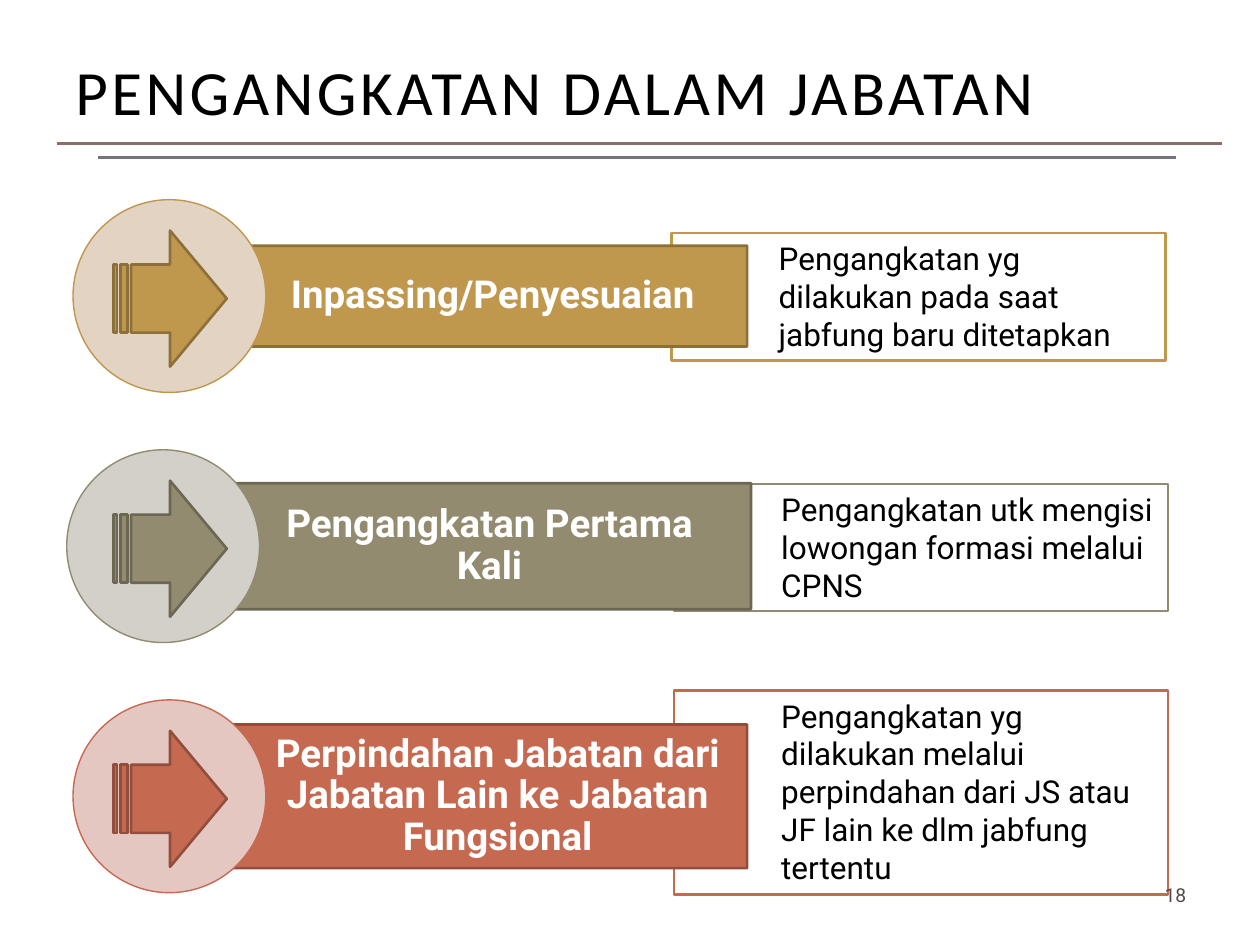
from pptx import Presentation, util as u
from pptx.dml.color import RGBColor
from pptx.enum import shapes, text
from pptx.oxml.ns import qn
from lxml import etree

TITLE = "PENGANGKATAN DALAM JABATAN"
PAGE = "18"

# Tops and heights of the notes, lefts of the bands and circles, in inches
ROUTES = [
    {"label": "Inpassing/Penyesuaian",
     "note": "Pengangkatan yg dilakukan pada saat jabfung baru ditetapkan",
     "main": "BF974D", "edge": "8D7039", "tint": "E2D3C2",
     "note_box": (5.33, 1.85, 3.92, 1.01),
     "band": (1.19, 4.74, 0.8), "label_left": 1.39, "circle_left": 0.58},
    {"label": "Pengangkatan Pertama Kali",
     "note": "Pengangkatan utk mengisi lowongan formasi melalui CPNS",
     "main": "928B70", "edge": "6C6753", "tint": "D2D0C9",
     "note_box": (5.35, 3.84, 3.92, 1.01),
     "band": (1.06, 4.9, 1.0), "label_left": 1.31, "circle_left": 0.53},
    {"label": "Perpindahan Jabatan dari Jabatan Lain ke Jabatan Fungsional",
     "note": "Pengangkatan yg dilakukan melalui perpindahan dari JS atau "
             "JF lain ke dlm jabfung tertentu",
     "main": "C66951", "edge": "924E3C", "tint": "E5C7C2",
     "note_box": (5.35, 5.48, 3.92, 1.62),
     "band": (1.19, 4.74, 1.14), "label_left": 1.47, "circle_left": 0.58},
]
RULES = [(0.45, 9.7, 1.14, "87706B"), (0.78, 9.33, 1.25, "6F777D")]

THEME = {
    "paper": "FFFFFF",
    "line": 1.5,
    "thin": 0.79,
    "title": {"name": "Calibri", "size": 36, "color": "000000"},
    "label": {"name": "Roboto", "size": 22, "color": "FFFFFF", "bold": True},
    "note": {"name": "Roboto", "size": 18, "color": "000000"},
    "page": {"name": "Roboto", "size": 11, "color": "534949"},
}
FIRST_CENTRE, PITCH = 2.35, 1.985
CIRCLE = 1.53
ARROW_LEFT, ARROW_WIDTH, ARROW_HEIGHT = 0.9, 0.9, 1.08

SHAPE = shapes.MSO_SHAPE
CENTRE = text.PP_ALIGN.CENTER
MIDDLE = text.MSO_ANCHOR.MIDDLE


def inches(box):
    return [u.Inches(length) for length in box]


def add_figure(slide, kind, box, fill, line, width=THEME["line"]):
    figure = slide.shapes.add_shape(kind, *inches(box))
    figure.shadow.inherit = False
    figure.fill.solid()
    figure.fill.fore_color.rgb = RGBColor.from_string(fill)
    figure.line.color.rgb = RGBColor.from_string(line)
    figure.line.width = u.Pt(width)
    return figure


def write(holder, words, style, align=text.PP_ALIGN.LEFT,
          anchor=MIDDLE, spacing=None, **margins):
    """Put one paragraph in a shape; margins are given in inches by side."""
    frame = holder.text_frame
    frame.word_wrap = True
    frame.vertical_anchor = anchor
    for side, length in margins.items():
        setattr(frame, f"margin_{side}", u.Inches(length))
    paragraph = frame.paragraphs[0]
    paragraph.alignment = align
    if spacing:
        paragraph.line_spacing = spacing
    run = paragraph.add_run()
    run.text = words
    formats = dict(style, size=u.Pt(style["size"]))
    run.font.color.rgb = RGBColor.from_string(formats.pop("color"))
    for key, value in formats.items():
        setattr(run.font, key, value)
    return run


def add_words(slide, box, words, style, **layout):
    return write(slide.shapes.add_textbox(*inches(box)), words, style, **layout)


def add_rule(slide, start, end, top, color):
    rule = slide.shapes.add_connector(
        shapes.MSO_CONNECTOR.STRAIGHT, *inches((start, top, end, top)))
    rule.line.color.rgb = RGBColor.from_string(color)
    rule.line.width = u.Pt(THEME["line"])
    etree.SubElement(rule._element.spPr, qn("a:effectLst"))


def add_note(slide, route):
    note = add_figure(slide, SHAPE.RECTANGLE, route["note_box"],
                      THEME["paper"], route["main"])
    write(note, route["note"], THEME["note"],
          anchor=text.MSO_ANCHOR.TOP, left=0.85)


def add_band(slide, route, centre):
    left, width, height = route["band"]
    top = centre - height / 2
    band = add_figure(slide, SHAPE.PENTAGON, (left, top, width, height),
                      route["main"], route["edge"])
    band.rotation = 180
    label_left = route["label_left"]
    add_words(slide, (label_left, top, left + width - label_left, height),
              route["label"], THEME["label"], align=CENTRE, spacing=0.9,
              left=0.67, top=0.09, right=0.17, bottom=0.09)
    add_figure(slide, SHAPE.OVAL,
               (route["circle_left"], centre - CIRCLE / 2, CIRCLE, CIRCLE),
               route["tint"], route["main"], THEME["thin"])


def add_arrow(slide, route, centre):
    top = centre + 0.02 - ARROW_HEIGHT / 2
    add_figure(slide, SHAPE.STRIPED_RIGHT_ARROW,
               (ARROW_LEFT, top, ARROW_WIDTH, ARROW_HEIGHT),
               route["main"], route["edge"])


def main():
    deck = Presentation()
    deck.slide_width, deck.slide_height = inches((10, 7.5))
    slide = deck.slides.add_slide(deck.slide_layouts[6])

    for route in reversed(ROUTES):
        add_note(slide, route)
    add_words(slide, (9.01, 6.95, 0.64, 0.3), PAGE, THEME["page"], align=CENTRE)
    title = add_words(slide, (0.5, 0.33, 9.92, 0.78), TITLE, THEME["title"])
    title.font._element.set("spc", "200")

    centres = [FIRST_CENTRE + PITCH * row for row in range(len(ROUTES))]
    for add_part in (add_band, add_arrow):
        for route, centre in zip(ROUTES, centres):
            add_part(slide, route, centre)
    for rule in RULES:
        add_rule(slide, *rule)
    deck.save("out.pptx")


if __name__ == "__main__":
    main()
